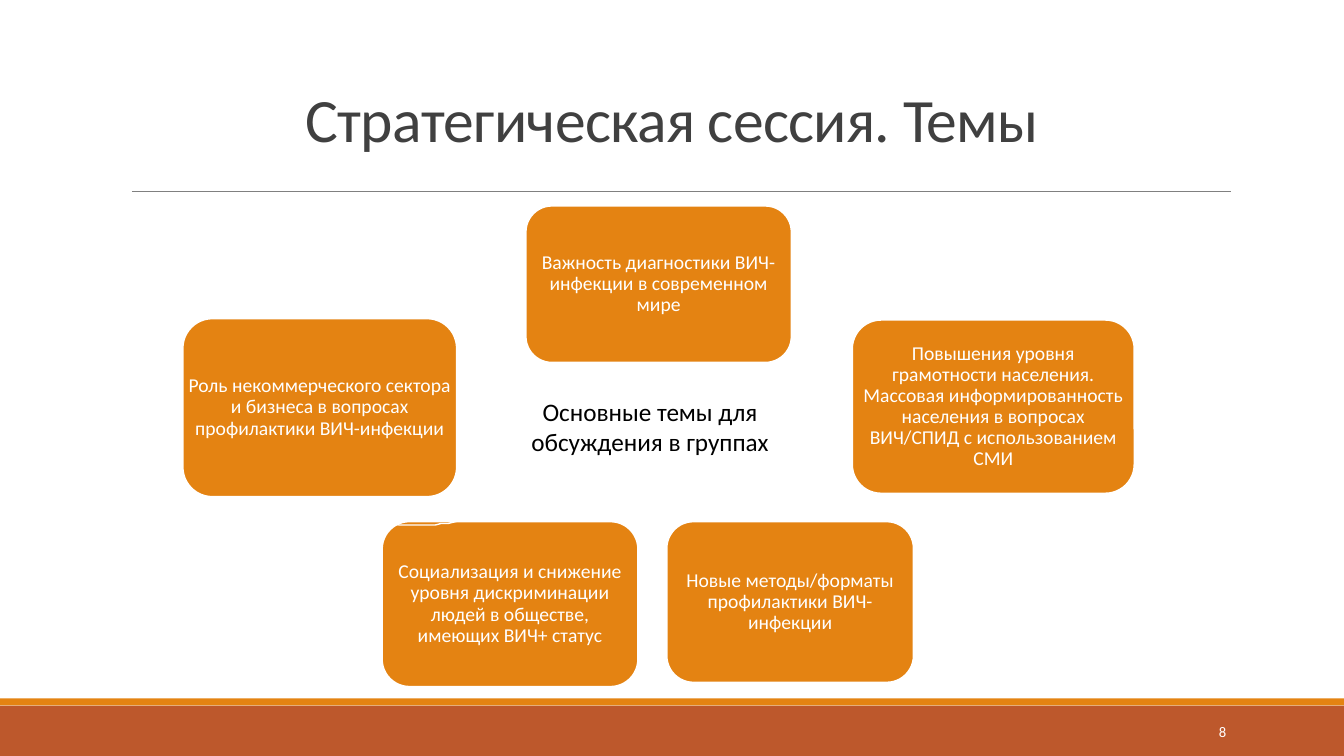
from dataclasses import dataclass

from lxml.etree import SubElement
from pptx import Presentation
from pptx.dml.color import RGBColor
from pptx.enum.shapes import MSO_CONNECTOR, MSO_SHAPE
from pptx.enum.text import MSO_ANCHOR, PP_ALIGN
from pptx.oxml.ns import qn
from pptx.util import Pt

ORANGE = "E48312"
RUST = "BD582C"
WHITE = "FFFFFF"
GREY = "808080"
DARK = "404040"
BLACK = "000000"
SLIDE_WIDTH = 960
SLIDE_HEIGHT = 540


@dataclass(frozen=True)
class Box:
    left: float
    top: float
    width: float
    height: float

    def lengths(self) -> tuple:
        return Pt(self.left), Pt(self.top), Pt(self.width), Pt(self.height)


@dataclass(frozen=True)
class Topic:
    text: str
    box: Box


TOPICS = [
    Topic("Важность диагностики ВИЧ-инфекции в современном мире", Box(375.6, 147, 189.8, 112)),
    Topic(
        "Повышения уровня грамотности населения. Массовая информированность "
        "населения в вопросах ВИЧ/СПИД с использованием СМИ",
        Box(608.7, 228.5, 201.6, 124),
    ),
    Topic("Новые методы/форматы профилактики ВИЧ-инфекции", Box(476.2, 372.5, 176.4, 115)),
    Topic(
        "Социализация и снижение уровня дискриминации людей в обществе, имеющих ВИЧ+ статус",
        Box(272.9, 372.5, 182.9, 118),
    ),
    Topic(
        "Роль некоммерческого сектора и бизнеса в вопросах профилактики ВИЧ-инфекции",
        Box(130.5, 227.5, 195.8, 127.4),
    ),
]
ARC_CONTROLS = [(328.3, 372.2), (293.8, 379.4), (257.8, 373.7), (226.8, 355.7)]
ARC_STEPS = 24


def color(value: str) -> RGBColor:
    return RGBColor.from_string(value)


def write_text(shape, text: str, *, size: float, text_color: str, align=PP_ALIGN.CENTER,
               anchor=MSO_ANCHOR.TOP, line_spacing: float = 1.0, inset: float | None = None,
               letter_spacing: float = 0) -> None:
    frame = shape.text_frame
    frame.word_wrap = True
    frame.vertical_anchor = anchor
    if inset is not None:
        frame.margin_left = frame.margin_right = Pt(inset)
        frame.margin_top = frame.margin_bottom = Pt(inset)
    paragraph = frame.paragraphs[0]
    paragraph.alignment = align
    paragraph.line_spacing = line_spacing
    run = paragraph.add_run()
    run.text = text
    run.font.name = "Calibri"
    run.font.size = Pt(size)
    run.font.color.rgb = color(text_color)
    if letter_spacing:
        run.font._element.set("spc", str(int(letter_spacing * 100)))


def add_text(slide, text: str, box: Box, **text_format) -> None:
    write_text(slide.shapes.add_textbox(*box.lengths()), text, **text_format)


def add_block(slide, kind, box: Box, fill: str, outline: str | None = None):
    shape = slide.shapes.add_shape(kind, *box.lengths())
    shape.shadow.inherit = False
    shape.fill.solid()
    shape.fill.fore_color.rgb = color(fill)
    if outline:
        shape.line.color.rgb = color(outline)
        shape.line.width = Pt(1.25)
    else:
        shape.line.fill.background()
    return shape


def add_title_rule(slide) -> None:
    rule = slide.shapes.add_connector(
        MSO_CONNECTOR.STRAIGHT, Pt(94.3), Pt(136.8), Pt(879), Pt(136.8)
    )
    rule.line.color.rgb = color(GREY)
    rule.line.width = Pt(0.5)
    SubElement(rule._element.spPr, qn("a:effectLst"))


def bezier_point(position: float) -> tuple[float, float]:
    rest = 1 - position
    weights = (rest**3, 3 * rest**2 * position, 3 * rest * position**2, position**3)
    x, y = (sum(w * v for w, v in zip(weights, axis)) for axis in zip(*ARC_CONTROLS))
    return x, y


def add_arc(slide) -> None:
    points = [bezier_point(step / ARC_STEPS) for step in range(ARC_STEPS + 1)]
    builder = slide.shapes.build_freeform(*points[0], scale=Pt(1))
    builder.add_line_segments(points[1:], close=False)
    arc = builder.convert_to_shape()
    arc.shadow.inherit = False
    arc.fill.background()
    arc.line.color.rgb = color(WHITE)
    arc.line.width = Pt(1)


def add_topic(slide, topic: Topic) -> None:
    add_block(slide, MSO_SHAPE.ROUNDED_RECTANGLE, topic.box, ORANGE, WHITE)
    add_text(slide, topic.text, topic.box, size=14, text_color=WHITE,
             anchor=MSO_ANCHOR.MIDDLE, line_spacing=0.9, inset=4.2)


def main() -> None:
    presentation = Presentation()
    presentation.slide_width = Pt(SLIDE_WIDTH)
    presentation.slide_height = Pt(SLIDE_HEIGHT)
    slide = presentation.slides.add_slide(presentation.slide_layouts[5])

    add_block(slide, MSO_SHAPE.RECTANGLE, Box(0, 504, SLIDE_WIDTH, 36), RUST)
    add_block(slide, MSO_SHAPE.RECTANGLE, Box(0, 498.8, SLIDE_WIDTH, 5.1), ORANGE)
    add_title_rule(slide)

    title = slide.shapes.title
    title.left, title.top, title.width, title.height = Box(0, 0, SLIDE_WIDTH, 114.5).lengths()
    write_text(title, "Стратегическая сессия. Темы", size=44, text_color=DARK,
               anchor=MSO_ANCHOR.BOTTOM, line_spacing=0.85, letter_spacing=-0.5)

    for topic in TOPICS:
        add_topic(slide, topic)
    add_arc(slide)

    add_text(slide, "Основные темы для обсуждения в группах", Box(367.8, 279.5, 193, 51),
             size=18, text_color=BLACK)
    add_text(slide, "8", Box(780, 508.5, 103, 28.8), size=10.5, text_color=WHITE,
             align=PP_ALIGN.RIGHT, anchor=MSO_ANCHOR.MIDDLE)
    presentation.save("out.pptx")


if __name__ == "__main__":
    main()
